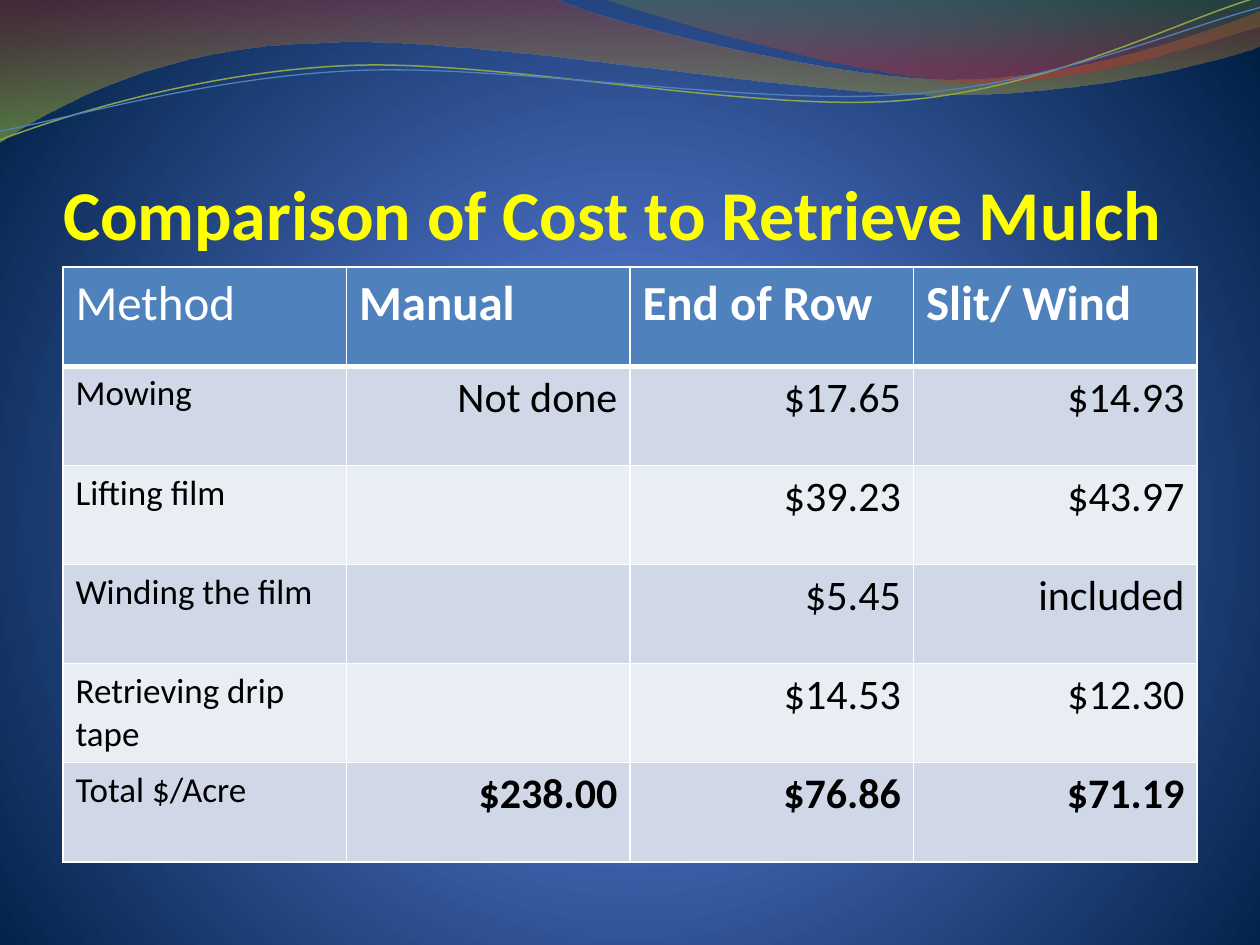
"""Build the slide comparing the cost of retrieving mulch by three methods."""
from dataclasses import dataclass
from math import cos, radians, sin
from typing import NamedTuple

from lxml.etree import SubElement
from pptx import Presentation
from pptx.dml.color import RGBColor as RGB
from pptx.enum.text import MSO_ANCHOR as ANCHOR, PP_ALIGN as ALIGN
from pptx.oxml import parse_xml
from pptx.oxml.ns import nsdecls, qn
from pptx.util import Pt

EMU_PER_PX = 9144


@dataclass(frozen=True)
class Theme:
    font: str = "Calibri"
    title: str = "FFFF00"
    white: str = "FFFFFF"
    ink: str = "000000"
    header: str = "4F81BD"
    bands: tuple = ("D0D8E8", "E9EDF4")
    title_size: int = 40
    header_size: int = 28
    label_size: int = 20
    value_size: int = 24
    border: int = 1
    header_rule: int = 3


class Stop(NamedTuple):
    pos: int
    color: str
    alpha: int = 100


class Wave(NamedTuple):
    """An outline whose segments hold one point (line) or three (curve)."""
    start: tuple
    segments: list
    stops: tuple = ()
    line: str = ""
    width: float = 0
    center: tuple = (0, 0)
    rotation: float = 0


THEME = Theme()
BACKGROUND = (Stop(0, "4D75D6"), Stop(25, "4E72C7"), Stop(100, "001F44"))
RADIAL = ('<a:path path="circle"><a:fillToRect l="10000" t="110000" '
          'r="10000" b="100000"/></a:path>')
DOWNWARD = '<a:lin ang="5400000" scaled="0"/>'
BANDS = [
    Wave((0, 0), [
        [(440, -1)],
        [(476, 17), (664, 63), (758, 63)],
        [(853, 63), (958, 26), (1000, 9)],
        [(1001, 36)],
        [(983, 44), (870, 76), (746, 75)],
        [(622, 75), (382, 28), (257, 34)],
        [(129, 36), (46, 83), (-1, 113)],
        [(0, 0)],
    ], stops=(Stop(0, "973330", 45), Stop(100, "95C238", 55))),
    Wave((479, -1), [
        [(509, 11), (682, 62), (769, 65)],
        [(856, 69), (961, 32), (1000, 21)],
        [(1000, 0)],
        [(479, -1)],
    ], stops=(Stop(0, "769537", 30), Stop(80, "BE3330", 45))),
]
STRANDS = [
    Wave((0, 111), [
        [(48, 93), (158, 57), (277, 52)],
        [(395, 47), (593, 89), (713, 80)],
        [(833, 71), (938, 15), (998, -2)],
    ], line="89A54F", width=0.85, center=(499, 57), rotation=357.3),
    Wave((0, 104), [
        [(47, 96), (164, 61), (283, 56)],
        [(403, 51), (597, 84), (717, 75)],
        [(836, 67), (941, 21), (1000, 6)],
    ], line="4F81BD", width=0.75, center=(500, 59), rotation=357.3),
]
ROWS = [
    ("Method", "Manual", "End of Row", "Slit/ Wind"),
    ("Mowing", "Not done", "$17.65", "$14.93"),
    ("Lifting film", "", "$39.23", "$43.97"),
    ("Winding the film", "", "$5.45", "included"),
    ("Retrieving drip tape", "", "$14.53", "$12.30"),
    ("Total $/Acre", "$238.00", "$76.86", "$71.19"),
]


def px(*values: float) -> list:
    return [round(v * EMU_PER_PX) for v in values]


def set_attrs(target, values: dict) -> None:
    for name, value in values.items():
        setattr(target, name, value)


def write(p, text: str, size: int, color: str, bold: bool, align=ALIGN.LEFT) -> None:
    p.alignment = align
    r = p.add_run()
    r.text = text
    set_attrs(r.font, {"name": THEME.font, "size": Pt(size), "bold": bold})
    r.font.color.rgb = RGB.from_string(color)


def set_gradient(parent, old_tag: str, stops: tuple, direction: str) -> None:
    """Replace the fill named old_tag inside parent with a gradient."""
    marks = "".join(
        f'<a:gs pos="{g.pos * 1000}"><a:srgbClr val="{g.color}">'
        f'<a:alpha val="{g.alpha * 1000}"/></a:srgbClr></a:gs>' for g in stops)
    grad = parse_xml(f'<a:gradFill {nsdecls("a")} rotWithShape="1">'
                     f'<a:gsLst>{marks}</a:gsLst>{direction}</a:gradFill>')
    parent.replace(parent.find(qn(old_tag)), grad)


def unturn(wave: Wave, point: tuple) -> tuple:
    """Return the point in EMU as it lies before the wave is rotated."""
    angle = radians(-wave.rotation)
    dx, dy = point[0] - wave.center[0], point[1] - wave.center[1]
    return tuple(px(wave.center[0] + dx * cos(angle) - dy * sin(angle),
                    wave.center[1] + dx * sin(angle) + dy * cos(angle)))


def draw_wave(shapes, wave: Wave) -> None:
    builder = shapes.build_freeform(*unturn(wave, wave.start))
    builder.add_line_segments([unturn(wave, seg[-1]) for seg in wave.segments],
                              close=bool(wave.stops))
    sp = builder.convert_to_shape()
    for node, seg in zip(list(sp._element.iter(qn("a:lnTo"))), wave.segments):
        if len(seg) == 3:
            curve = node.makeelement(qn("a:cubicBezTo"))
            for point in seg:
                x, y = unturn(wave, point)
                SubElement(curve, qn("a:pt"), x=str(x - sp.left), y=str(y - sp.top))
            node.getparent().replace(node, curve)
    sp.rotation = wave.rotation
    sp.shadow.inherit = False
    sp.fill.background()
    if wave.stops:
        sp.line.fill.background()
        set_gradient(sp._element.spPr, "a:noFill", wave.stops, DOWNWARD)
    else:
        sp.line.color.rgb = RGB.from_string(wave.line)
        sp.line.width = Pt(wave.width)


def draw_title(s, text: str) -> None:
    sp = s.shapes.title
    sp._element.getparent().append(sp._element)
    set_attrs(sp, dict(zip(("left", "top", "width", "height"), px(50, 77, 900, 125))))
    tf = sp.text_frame
    set_attrs(tf, {"vertical_anchor": ANCHOR.BOTTOM, "word_wrap": True, "margin_left": 0,
                   "margin_top": px(5)[0], "margin_right": 0, "margin_bottom": 0})
    write(tf.paragraphs[0], text, THEME.title_size, THEME.title, True)


def set_borders(cell, row: int) -> None:
    top = THEME.header_rule if row == 1 else THEME.border
    bottom = THEME.header_rule if row == 0 else THEME.border
    sides = {"lnL": THEME.border, "lnR": THEME.border, "lnT": top, "lnB": bottom}
    for tag, width in sides.items():
        cell._tc.get_or_add_tcPr().append(parse_xml(
            f'<a:{tag} {nsdecls("a")} w="{Pt(width)}"><a:solidFill>'
            f'<a:srgbClr val="{THEME.white}"/></a:solidFill></a:{tag}>'))


def draw_table(s, rows: list) -> None:
    table = s.shapes.add_table(len(rows), len(rows[0]), *px(50, 212, 900, 472)).table
    for i, row in enumerate(rows):
        for j, text in enumerate(row):
            cell = table.cell(i, j)
            set_borders(cell, i)
            cell.fill.solid()
            fill = THEME.bands[(i - 1) % 2] if i else THEME.header
            cell.fill.fore_color.rgb = RGB.from_string(fill)
            if not text:
                continue
            p = cell.text_frame.paragraphs[0]
            if i == 0:
                write(p, text, THEME.header_size, THEME.white, j > 0)
            elif j == 0:
                write(p, text, THEME.label_size, THEME.ink, False)
            else:
                write(p, text, THEME.value_size, THEME.ink, i == len(rows) - 1, ALIGN.RIGHT)


def main() -> None:
    prs = Presentation()
    prs.slide_width, prs.slide_height = px(1000, 750)
    s = prs.slides.add_slide(prs.slide_layouts.get_by_name("Title Only"))
    s.background.fill.solid()
    set_gradient(s._element.find(".//" + qn("p:bgPr")), "a:solidFill", BACKGROUND, RADIAL)
    for shapes, waves in ((s.shapes, BANDS), (s.shapes.add_group_shape().shapes, STRANDS)):
        for wave in waves:
            draw_wave(shapes, wave)
    group = s.shapes[1]._element
    group.getparent().append(group)
    draw_title(s, "Comparison of Cost to Retrieve Mulch")
    draw_table(s, ROWS)
    prs.save("out.pptx")


if __name__ == "__main__":
    main()
